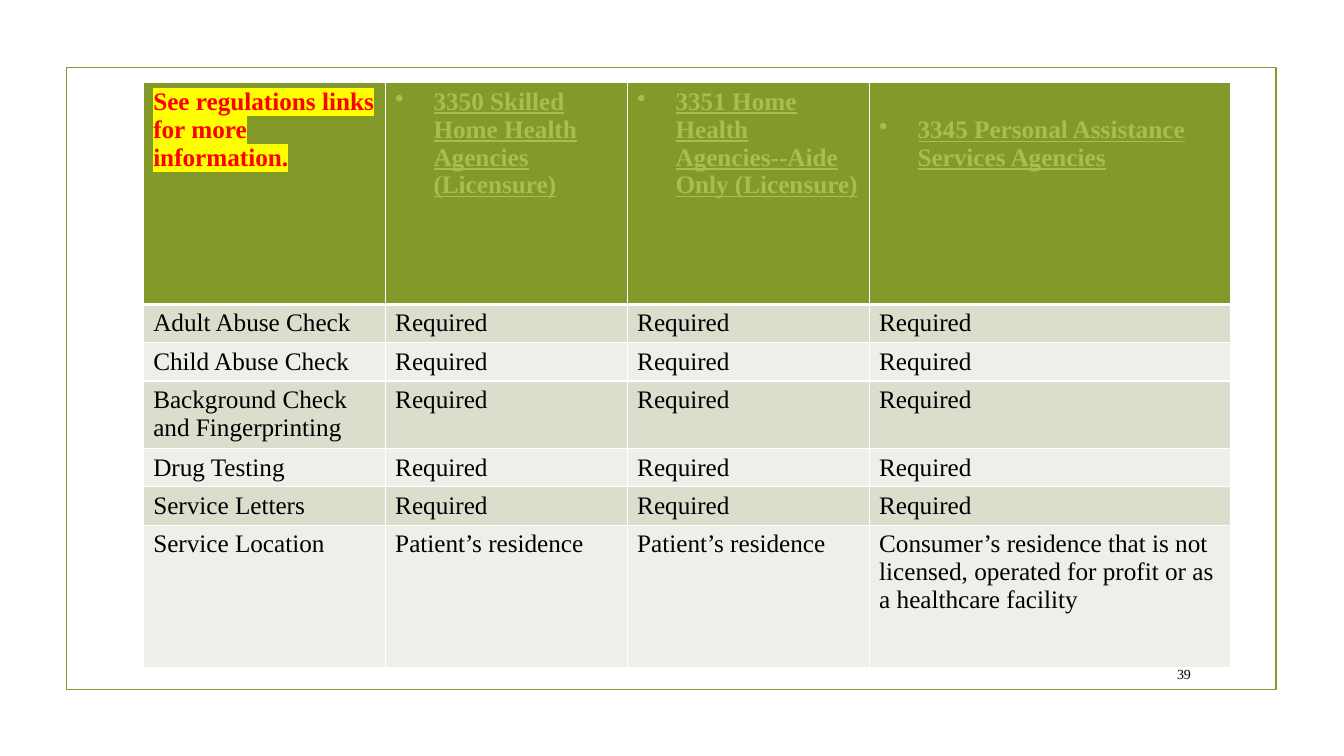
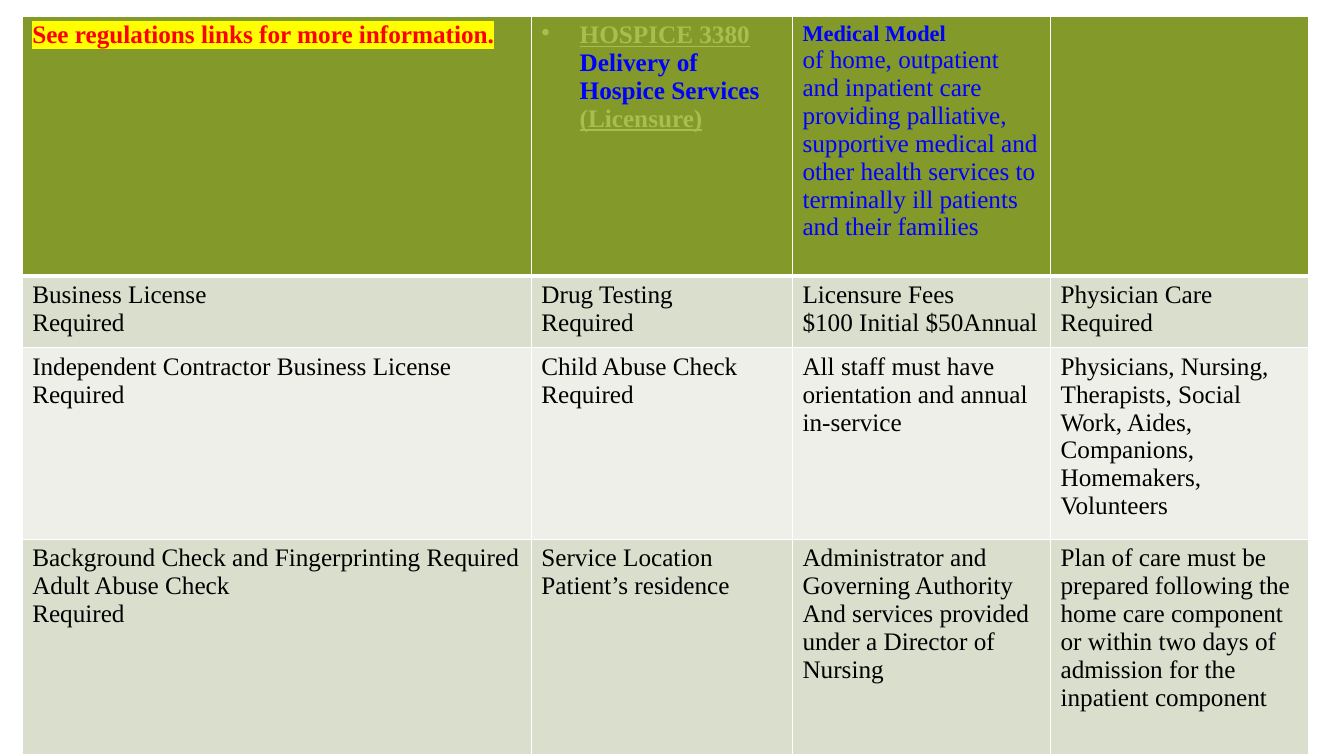
import pptx
import pptx.util
import pptx.dml.color
import pptx.enum.shapes
import pptx.enum.text
from pptx.oxml.ns import qn
from lxml import etree

Inches, Pt = pptx.util.Inches, pptx.util.Pt
FONT = "Times New Roman"
COLORS = {"olive": "83992A", "dark": "D9DECD", "light": "EDEFE8", "white": "FFFFFF",
          "red": "FF0000", "yellow": "FFFF00", "link": "A8BF4D", "blue": "0000FF",
          "black": "000000"}

# Text styles: size, colour, bold, underline, highlight
STYLES = {"body": (18, "black", False, False, None),
          "note": (18, "red", True, False, "yellow"),
          "link": (18, "link", True, True, None),
          "bold": (18, "blue", True, False, None),
          "lead": (16, "blue", True, False, None),
          "blue": (18, "blue", False, False, None)}

# Content: each head cell is a list of paragraphs, each a list of (style, text) runs
NOTE = [[("note", "See regulations links for more information.")]]
REQ, HOME = "Required", "Patient’s residence"

AGENCY = {
    "at": (1.42, 0.82),
    "cols": [2.4, 2.4, 2.4, 3.59],
    "rows": [2.2, 0.38, 0.38, 0.67, 0.38, 0.38, 1.41],
    "drop": {3: 0.33},
    "page": "39",
    "head": [NOTE,
             [[("link", "3350 Skilled Home Health Agencies (Licensure)")]],
             [[("link", "3351 Home Health Agencies--Aide Only (Licensure)")]],
             [[("link", "3345 Personal Assistance Services Agencies")]]],
    "body": [[name, REQ, REQ, REQ] for name in (
        "Adult Abuse Check", "Child Abuse Check", "Background Check and Fingerprinting",
        "Drug Testing", "Service Letters")] + [
        ["Service Location", HOME, HOME,
         "Consumer’s residence that is not licensed, operated for profit or as a "
         "healthcare facility"]],
}

HOSPICE = {
    "at": (0.22, 0.16),
    "cols": [5.05, 2.59, 2.56, 2.56],
    "rows": [2.58, 0.71, 1.62, 2.14],
    "drop": {},
    "page": None,
    "head": [NOTE,
             [[("link", "HOSPICE 3380 "), ("bold", "Delivery of Hospice Services "),
               ("link", "(Licensure)")]],
             [[("lead", "Medical Model")],
              [("blue", "of home, outpatient and inpatient care providing palliative, "
                "supportive medical and other health services to terminally ill "
                "patients and their families")]],
             []],
    "body": [
        ["Business License\nRequired", "Drug Testing\nRequired",
         "Licensure Fees\n$100 Initial $50Annual", "Physician Care\nRequired"],
        ["Independent Contractor Business License\nRequired", "Child Abuse Check\nRequired",
         "All staff must have orientation and annual\nin-service",
         "Physicians, Nursing, Therapists, Social Work, Aides, Companions, "
         "Homemakers, Volunteers"],
        ["Background Check and Fingerprinting Required\nAdult Abuse Check\nRequired",
         "Service Location\nPatient’s residence",
         "Administrator and Governing Authority\n"
         "And services provided under a Director of Nursing",
         "Plan of care must be prepared following the home care component or within "
         "two days of admission for the inpatient component"]],
}


def rgb(name):
    return pptx.dml.color.RGBColor.from_string(COLORS[name])


def tint(parent, name):
    fill = etree.SubElement(parent, qn("a:solidFill"))
    etree.SubElement(fill, qn("a:srgbClr"), val=COLORS[name])


def style(font, size, color, bold=False, line=False):
    font.name, font.size, font.bold, font.underline = FONT, Pt(size), bold, line
    font.color.rgb = rgb(color)


def bullet(para):
    props = para._p.get_or_add_pPr()
    props.set("marL", str(Inches(0.38)))
    props.set("indent", str(-Inches(0.38)))
    etree.SubElement(props, qn("a:buChar"), char="•")
    tabs = etree.SubElement(props, qn("a:tabLst"))
    etree.SubElement(tabs, qn("a:tab"), pos=str(Inches(0.5)), algn="l")


def write(cell, paras):
    frame = cell.text_frame
    for i, runs in enumerate(paras):
        para = frame.add_paragraph() if i else frame.paragraphs[0]
        if runs[0][0] == "link":
            bullet(para)
        if len(runs) == 1:
            style(para.font, *STYLES[runs[0][0]][:4])
        for kind, text in runs:
            run = para.add_run()
            run.text = text
            *look, mark = STYLES[kind]
            if len(runs) > 1 or mark:
                style(run.font, *look)
            if mark:
                glow = etree.Element(qn("a:highlight"))
                etree.SubElement(glow, qn("a:srgbClr"), val=COLORS[mark])
                run._r.rPr.find(qn("a:solidFill")).addnext(glow)


def edge(cell, top, foot):
    props = cell._tc.get_or_add_tcPr()
    for side, width in (("L", 1), ("R", 1), ("T", top), ("B", foot)):
        tint(etree.SubElement(props, qn("a:ln" + side), w=str(Pt(width))), "white")


def grid(slide, data):
    cols, rows = data["cols"], data["rows"]
    size = (len(rows), len(cols))
    box = [Inches(n) for n in (*data["at"], sum(cols), sum(rows))]
    table = slide.shapes.add_table(*size, *box).table
    table.first_row = table.horz_banding = False
    for col, width in zip(table.columns, cols):
        col.width = Inches(width)
    for row, height in zip(table.rows, rows):
        row.height = Inches(height)
    body = [[[[("body", line)] for line in text.split("\n")] for text in row]
            for row in data["body"]]
    for r, row in enumerate([data["head"]] + body):
        for c, paras in enumerate(row):
            cell = table.cell(r, c)
            edge(cell, 3 if r == 1 else 1, 1 if r else 3)
            cell.fill.solid()
            cell.fill.fore_color.rgb = rgb(("light", "dark")[r % 2] if r else "olive")
            write(cell, paras)
    for c, top in data["drop"].items():
        table.cell(0, c).margin_top = Inches(top)


def border(slide):
    box = slide.shapes.add_shape(pptx.enum.shapes.MSO_SHAPE.RECTANGLE,
                                 Inches(0.66), Inches(0.67), Inches(12), Inches(6.17))
    box.shadow.inherit = False
    box.fill.background()
    box.line.color.rgb = rgb("olive")
    box.line.width = Pt(1.25)


def number(slide, text):
    box = slide.shapes.add_textbox(Inches(11.32), Inches(6.53), Inches(0.59), Inches(0.31))
    frame = box.text_frame
    frame.word_wrap = True
    frame.vertical_anchor = pptx.enum.text.MSO_ANCHOR.MIDDLE
    para = frame.paragraphs[0]
    para.text = text
    para.alignment = pptx.enum.text.PP_ALIGN.RIGHT
    style(para.font, 10, "black")


def main():
    deck = pptx.Presentation()
    deck.slide_width, deck.slide_height = Inches(13.33), Inches(7.5)
    for data in (AGENCY, HOSPICE):
        slide = deck.slides.add_slide(deck.slide_layouts[6])
        # The wide hospice table fills its slide, so only a numbered page is framed
        if data["page"]:
            border(slide)
        grid(slide, data)
        if data["page"]:
            number(slide, data["page"])
    deck.save("out.pptx")


if __name__ == "__main__":
    main()
